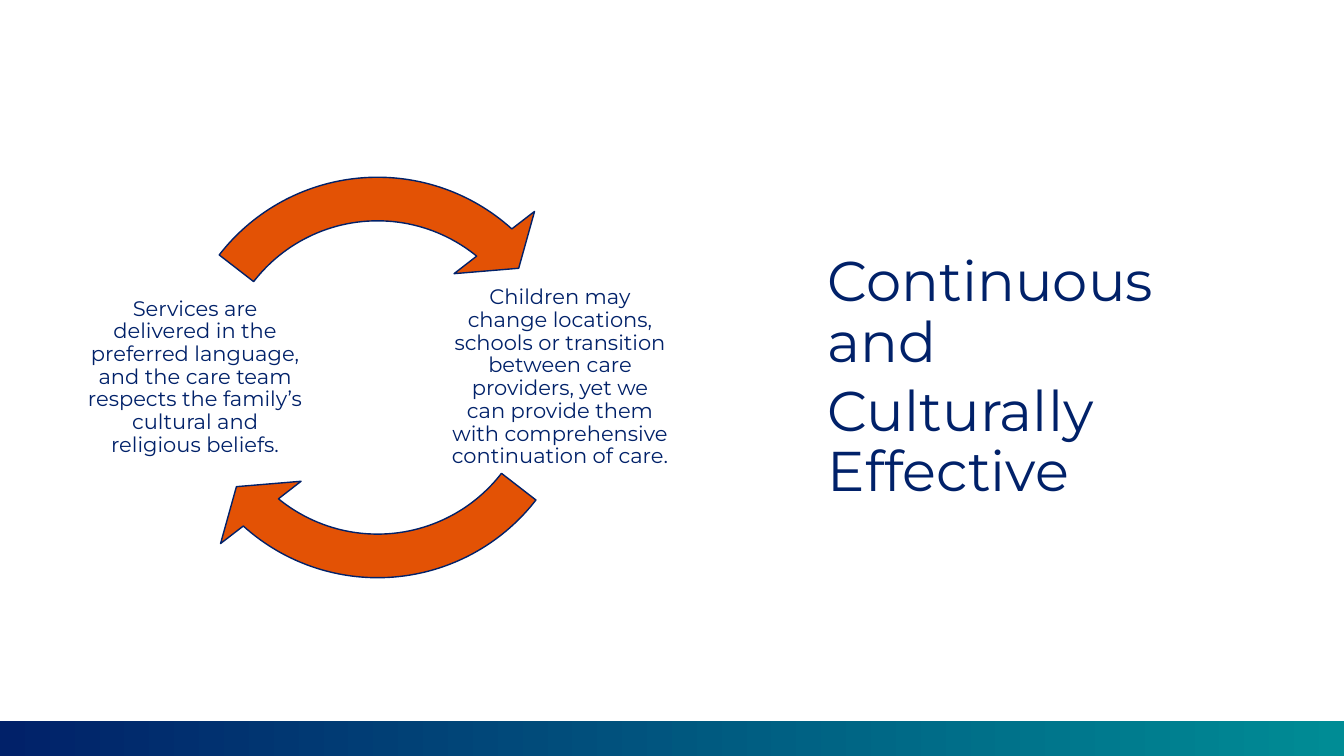
import pptx
import pptx.dml.color
import pptx.enum.shapes
import pptx.enum.text
import pptx.util

COLORS = {"navy": "012169", "teal": "008C95", "orange": "E35205", "white": "FFFFFF"}
SHAPES = pptx.enum.shapes.MSO_SHAPE
ALIGN = pptx.enum.text.PP_ALIGN
HALF_TURN = 108


def color(name):
    return pptx.dml.color.RGBColor.from_string(COLORS[name])


class CycleSlide:
    font_name = "Montserrat"

    def __init__(self, presentation):
        self.width = presentation.slide_width
        self.height = presentation.slide_height
        self.slide = presentation.slides.add_slide(presentation.slide_layouts[5])

    def area(self, left, top, width, height):
        return (
            round(self.width * left / 100),
            round(self.height * top / 100),
            round(self.width * width / 100),
            round(self.height * height / 100),
        )

    def set_text(self, shape, texts, size, alignment, space_after=0):
        frame = shape.text_frame
        frame.word_wrap = True
        frame.auto_size = pptx.enum.text.MSO_AUTO_SIZE.NONE
        frame.vertical_anchor = pptx.enum.text.MSO_ANCHOR.MIDDLE
        frame.text = "\n".join(texts)
        for paragraph in frame.paragraphs:
            paragraph.alignment = alignment
            paragraph.line_spacing = 0.9
            paragraph.space_after = pptx.util.Pt(space_after)
            paragraph.font.name = self.font_name
            paragraph.font.size = pptx.util.Pt(size)
            paragraph.font.color.rgb = color("navy")

    def shape(self, kind, area, fill=None):
        shape = self.slide.shapes.add_shape(kind, *self.area(*area))
        shape.shadow.inherit = False
        shape.line.fill.background()
        if fill:
            shape.fill.solid()
            shape.fill.fore_color.rgb = color(fill)
        return shape

    def panel(self, area):
        panel = self.shape(SHAPES.RECTANGLE, area, "white")
        self.slide.shapes.title.element.addprevious(panel.element)

    def title(self, area, texts):
        title = self.slide.shapes.title
        title.left, title.top, title.width, title.height = self.area(*area)
        self.set_text(title, texts, 40, ALIGN.LEFT, 6)

    def gradient_bar(self, area, names):
        bar = self.shape(SHAPES.RECTANGLE, area)
        bar.fill.gradient()
        bar.fill.gradient_angle = 0
        for stop, name in zip(bar.fill.gradient_stops, names):
            stop.color.rgb = color(name)

    def caption(self, area, text):
        box = self.slide.shapes.add_textbox(*self.area(*area))
        frame = box.text_frame
        frame.margin_left = frame.margin_right = pptx.util.Inches(0.02)
        frame.margin_top = frame.margin_bottom = pptx.util.Inches(0.02)
        self.set_text(box, [text], 15, ALIGN.CENTER)

    def cycle_arrow(self, area, turn):
        arrow = self.shape(SHAPES.CIRCULAR_ARROW, area, "orange")
        arrow.line.color.rgb = color("navy")
        arrow.line.width = pptx.util.Pt(1)
        values = (0.095, 6.85, 78.51 + turn, 22.64 + turn, 0.111)
        for index, value in enumerate(values):
            arrow.adjustments[index] = value


def main():
    presentation = pptx.Presentation()
    presentation.slide_width = pptx.util.Inches(13.33)
    presentation.slide_height = pptx.util.Inches(7.5)
    page = CycleSlide(presentation)

    page.panel((55.59, 0, 44.41, 100))
    page.title((60.84, 15.2, 33.76, 69.73), ["Continuous and", "Culturally Effective"])
    page.gradient_bar((0, 95.4, 100, 4.6), ("navy", "teal"))

    steps = (
        (33.38, 0, "Children may change locations, schools or transition between care "
         "providers, yet we can provide them with comprehensive continuation of care."),
        (6.23, HALF_TURN, "Services are delivered in the preferred language, and the care "
         "team respects the family’s cultural and religious beliefs."),
    )
    for left, turn, text in steps:
        page.caption((left, 35.2, 16.58, 29.47), text)
        page.cycle_arrow((11.03, 19.6, 34.13, 60.67), turn)

    presentation.save("out.pptx")


if __name__ == "__main__":
    main()
